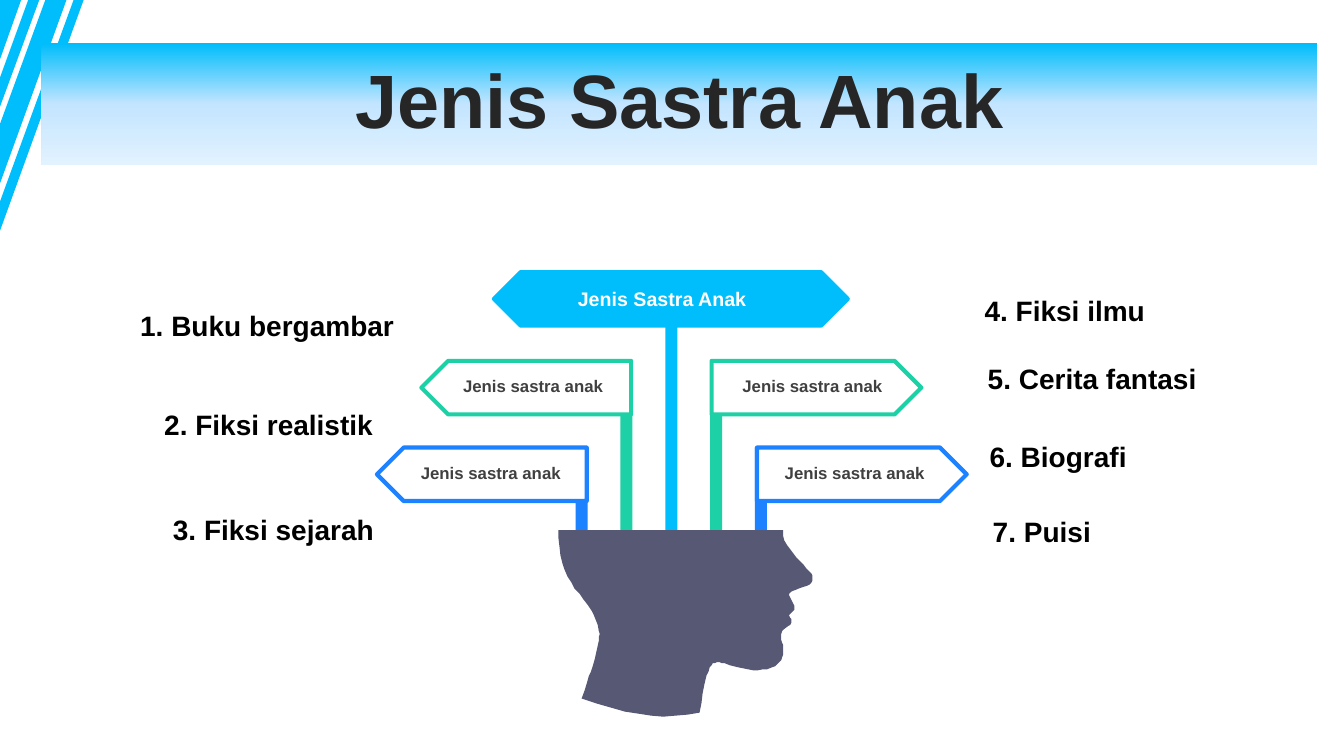
from copy import deepcopy

from pptx import Presentation
from pptx.dml.color import RGBColor
from pptx.enum import shapes, text
from pptx.oxml.ns import qn
from pptx.util import Pt

SKY, GREEN, BLUE, SLATE = "00BDFB", "1ED0A6", "1C82FF", "565874"
GRID = Pt(0.72)  # unit of the outline coordinates below

# Each stripe runs from the top edge (x from, x to) to the left edge (y from, y to).
STRIPES = [(73, 83, 200, 229), (45, 66, 123, 182), (28, 39, 77, 106), (0, 21, 0, 59)]

HEAD = [
    (554, 526), (777, 526), (777, 532), (778, 536), (781, 541), (784, 545),
    (787, 549), (790, 553), (793, 556), (797, 560), (800, 564), (802, 566),
    (805, 569), (806, 571), (806, 576), (805, 578), (803, 580), (801, 581),
    (798, 582), (795, 583), (792, 584), (790, 585), (787, 586), (785, 587),
    (783, 589), (783, 591), (784, 593), (785, 595), (787, 599), (788, 601),
    (788, 605), (787, 606), (785, 608), (783, 610), (783, 611), (784, 613),
    (785, 614), (785, 618), (784, 620), (782, 621), (778, 624), (776, 626),
    (775, 629), (775, 635), (776, 638), (777, 640), (777, 649), (776, 652),
    (775, 655), (773, 657), (769, 661), (766, 662), (761, 664), (757, 664),
    (752, 665), (747, 665), (742, 664), (732, 662), (724, 660), (719, 658),
    (716, 658), (714, 657), (711, 657), (709, 658), (707, 658), (706, 660),
    (704, 662), (703, 666), (701, 670), (699, 678), (697, 688), (696, 697),
    (694, 707), (682, 709), (670, 710), (658, 711), (646, 710), (633, 708),
    (620, 706), (606, 702), (592, 698), (577, 693), (580, 685), (583, 675),
    (584, 671), (586, 667), (588, 661), (590, 654), (592, 645), (594, 636),
    (594, 632), (595, 629), (594, 626), (593, 620), (591, 615), (589, 610),
    (587, 606), (583, 600), (579, 595), (575, 589), (570, 584), (567, 578),
    (563, 572), (560, 565), (558, 559), (556, 551), (555, 542), (554, 534),
]

# Colour, sign left, label left, top, points left
SIGNS = [
    (BLUE, 540.7, 547.9, 319.7, False),
    (GREEN, 508.3, 517.7, 257.8, False),
    (BLUE, 269.3, 288, 319.7, True),
    (GREEN, 301, 318.2, 257.8, True),
]

LEFT_ITEMS = [
    ("1. Buku bergambar", 87.8, 216.7),
    ("2. Fiksi realistik", 72.7, 287.3),
    ("3. Fiksi sejarah", 73.4, 362.9),
]
RIGHT_ITEMS = [
    ("4. Fiksi ilmu", 696.2, 205.9),
    ("5. Cerita fantasi", 698.4, 254.9),
    ("6. Biografi", 699.8, 310.3),
    ("7. Puisi", 702, 364.3),
]


def rgb(value):
    return RGBColor.from_string(value)


def paint(sp, fill, line=None):
    sp.shadow.inherit = False
    sp.fill.solid()
    sp.fill.fore_color.rgb = rgb(fill)
    if line:
        sp.line.color.rgb = rgb(line)
        sp.line.width = Pt(3)
    else:
        sp.line.fill.background()


def add_preset(slide, kind, x, y, w, h, fill, line=None):
    sp = slide.shapes.add_shape(kind, Pt(x), Pt(y), Pt(w), Pt(h))
    paint(sp, fill, line)
    return sp


def add_outline(slide, contours, fill):
    """Draw closed contours, given in GRID units, as one shape."""
    first, *rest = contours
    builder = slide.shapes.build_freeform(*first[0], scale=GRID)
    builder.add_line_segments(first[1:], close=True)
    for contour in rest:
        builder.move_to(*contour[0])
        builder.add_line_segments(contour[1:], close=True)
    sp = builder.convert_to_shape()
    paint(sp, fill)
    return sp


def format_paragraph(p, size, color, align):
    p.alignment = align
    for r in p.runs:
        r.font.name = "Arial"
        r.font.size = Pt(size)
        r.font.bold = True
        r.font.color.rgb = rgb(color)


def add_label(slide, words, x, y, w, h, size, color, align=text.PP_ALIGN.CENTER):
    tf = slide.shapes.add_textbox(Pt(x), Pt(y), Pt(w), Pt(h)).text_frame
    tf.word_wrap = True
    tf.auto_size = text.MSO_AUTO_SIZE.SHAPE_TO_FIT_TEXT
    tf.text = words
    format_paragraph(tf.paragraphs[0], size, color, align)


def fill_gradient(sp, colors):
    """Fill from top to bottom with evenly spaced colours."""
    sp.fill.gradient()
    sp.fill.gradient_angle = 270
    stops = sp._element.spPr.find(qn("a:gradFill")).find(qn("a:gsLst"))
    for _ in colors[2:]:
        stops.append(deepcopy(stops[0]))
    for i, (stop, color) in enumerate(zip(sp.fill.gradient_stops, colors)):
        stop.position = i / (len(colors) - 1)
        stop.color.rgb = rgb(color)


def set_title(slide, words):
    sp = slide.shapes.title
    sp.left, sp.top, sp.width, sp.height = Pt(29.5), Pt(31), Pt(911.5), Pt(87.1)
    fill_gradient(sp, [SKY, "C4E5FF", "E2F2FF"])
    tf = sp.text_frame
    tf.auto_size = text.MSO_AUTO_SIZE.NONE
    tf.vertical_anchor = text.MSO_ANCHOR.MIDDLE
    tf.text = words
    p = tf.paragraphs[0]
    p.line_spacing = 0.9
    p.space_before = Pt(10)
    format_paragraph(p, 54, "262626", text.PP_ALIGN.CENTER)


def add_stripes(slide):
    contours = [[(x0, 0), (x1, 0), (0, y1), (0, y0)] for x0, x1, y0, y1 in STRIPES]
    sp = add_outline(slide, contours, SKY)
    slide.shapes.title._element.addprevious(sp._element)


def add_posts(slide):
    tops = [(BLUE, 319.7), (GREEN, 257), (SKY, 231.8), (GREEN, 257), (BLUE, 319.7)]
    for i, (color, top) in enumerate(tops):
        add_preset(slide, shapes.MSO_SHAPE.RECTANGLE,
                   411.2 + 32 * i, top, 8.6, 393.5 - top, color)


def add_signs(slide):
    for color, x, label_x, y, points_left in SIGNS:
        sp = add_preset(slide, shapes.MSO_SHAPE.PENTAGON,
                        x, y, 149.8, 38.2, "FFFFFF", color)
        if points_left:
            sp._element.spPr.find(qn("a:xfrm")).set("flipH", "1")
        add_label(slide, "Jenis sastra anak", label_x, y + 7.2, 125.3, 21.6, 12, "404040")

    banner = add_preset(slide, shapes.MSO_SHAPE.HEXAGON,
                        352.8, 194.4, 252.7, 38.2, SKY, SKY)
    banner.adjustments[0] = 0.5
    add_label(slide, "Jenis Sastra Anak", 393.8, 201.6, 158.4, 24.5, 14, "FFFFFF")


def add_items(slide, items, align):
    for words, x, y in items:
        add_label(slide, words, x, y, 200.9, 31.7, 20, "000000", align)


def main():
    prs = Presentation()
    prs.slide_width, prs.slide_height = Pt(960), Pt(540)
    slide = prs.slides.add_slide(prs.slide_layouts[5])
    set_title(slide, "Jenis Sastra Anak")
    add_stripes(slide)
    add_posts(slide)
    add_outline(slide, [HEAD], SLATE)
    add_signs(slide)
    add_items(slide, LEFT_ITEMS, text.PP_ALIGN.RIGHT)
    add_items(slide, RIGHT_ITEMS, text.PP_ALIGN.LEFT)
    prs.save("out.pptx")


if __name__ == "__main__":
    main()
